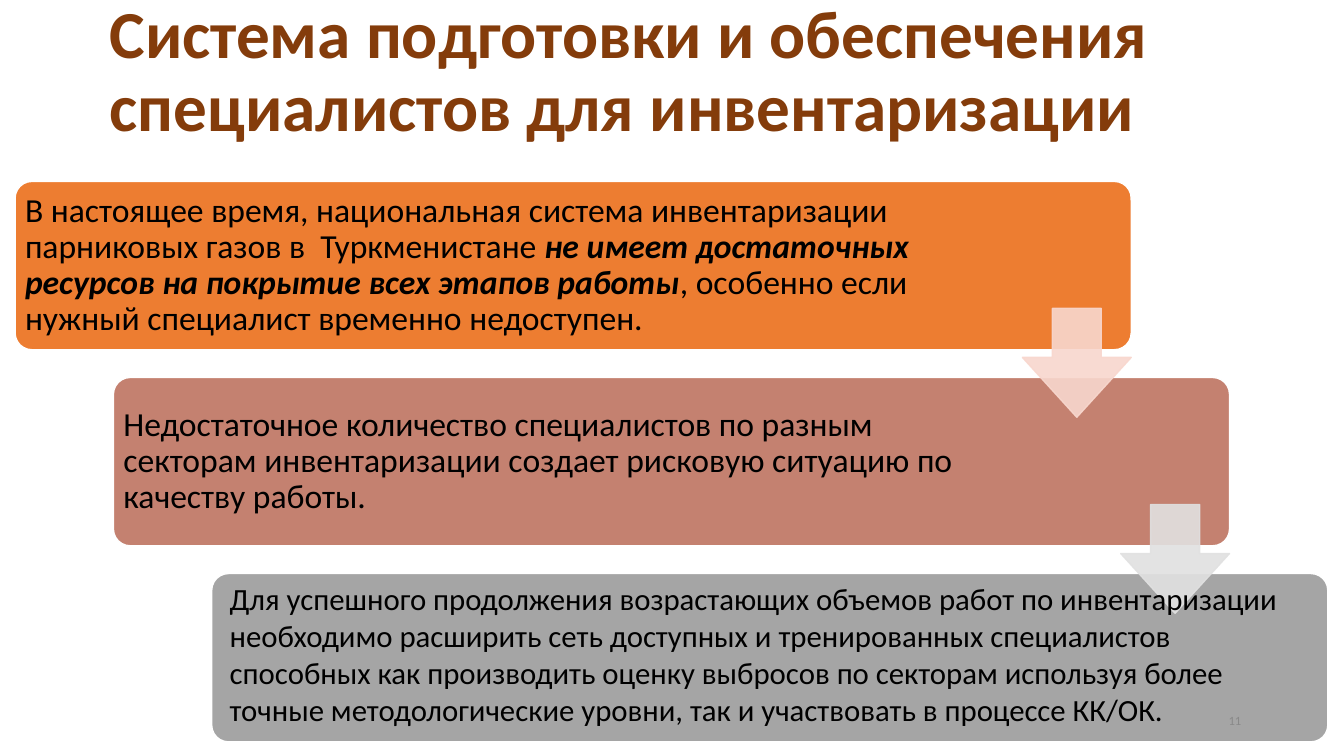
from lxml import etree
from pptx import Presentation
from pptx.dml.color import RGBColor
from pptx.enum.shapes import MSO_SHAPE as Shape
from pptx.enum.text import MSO_ANCHOR as Anchor, PP_ALIGN as Align
from pptx.oxml.ns import qn
from pptx.util import Inches, Pt

FONT = "Calibri"
TITLE = "Система подготовки и обеспечения специалистов для инвентаризации"
CONCLUSION = (
    "Для успешного продолжения возрастающих объемов работ по инвентаризации "
    "необходимо расширить сеть доступных и тренированных специалистов способных "
    "как производить оценку выбросов по секторам используя более точные "
    "методологические уровни, так и участвовать в процессе КК/ОК."
)
# Each step: box colour, text width, runs as (text, emphasised)
STEPS = [
    ("ED7D31", 9.37, [
        ("В настоящее время, национальная система инвентаризации парниковых "
         "газов в  Туркменистане ", False),
        ("не имеет достаточных ресурсов на покрытие всех этапов работы", True),
        (", особенно если нужный специалист временно недоступен.", False),
    ]),
    ("C48170", 9.01, [
        ("Недостаточное количество специалистов по разным секторам инвентаризации "
         "создает рисковую ситуацию по качеству работы.", False),
    ]),
    ("A5A5A5", 0, []),
]
ARROW_COLORS = ["F8D7CE", "E1E1E1"]
PAGE_NUMBER = "11"

STEP_LEFT, STEP_TOP = 0.15, 1.8
STEP_WIDTH, STEP_HEIGHT = 11.07, 1.67
SHIFT_X, SHIFT_Y = 0.975, 1.945
ARROW_LEFT, ARROW_TOP, ARROW_SIZE = 10.14, 3.06, 1.08


def rgb(color):
    return RGBColor.from_string(color)


def set_opacity(color_format_parent, percent):
    """Add an alpha value to every solid colour inside an XML element."""
    for color in color_format_parent.iter(qn("a:srgbClr")):
        etree.SubElement(color, qn("a:alpha")).set("val", str(percent * 1000))


def add_box(slide, kind, left, top, width, height, *, fill, line, adjustments, opacity=100):
    shape = slide.shapes.add_shape(
        kind, Inches(left), Inches(top), Inches(width), Inches(height))
    shape.shadow.inherit = False
    shape.fill.solid()
    shape.fill.fore_color.rgb = rgb(fill)
    shape.line.color.rgb = rgb(line)
    shape.line.width = Pt(1)
    for index, value in enumerate(adjustments):
        shape.adjustments[index] = value
    if opacity < 100:
        set_opacity(shape.fill._xPr, opacity)


def add_text(slide, runs, left, top, width, height, *, size, color="000000", bold=False,
             anchor=Anchor.TOP, align=Align.LEFT, spacing=1.0, inset_y=0.05):
    box = slide.shapes.add_textbox(
        Inches(left), Inches(top), Inches(width), Inches(height))
    frame = box.text_frame
    frame.word_wrap = True
    frame.vertical_anchor = anchor
    frame.margin_left = frame.margin_right = Inches(0.1)
    frame.margin_top = frame.margin_bottom = Inches(inset_y)
    paragraph = frame.paragraphs[0]
    paragraph.alignment = align
    paragraph.line_spacing = spacing
    for text, emphasised in runs:
        run = paragraph.add_run()
        run.text = text
        run.font.name = FONT
        run.font.size = Pt(size)
        run.font.bold = bold or emphasised
        run.font.italic = emphasised
        run.font.color.rgb = rgb(color)


def main():
    presentation = Presentation()
    presentation.slide_width, presentation.slide_height = Inches(13.33), Inches(7.5)
    slide = presentation.slides.add_slide(presentation.slide_layouts[6])

    add_text(slide, [(TITLE, False)], 0.99, 0, 11.5, 1.45, size=48, color="843C0B",
             bold=True, anchor=Anchor.MIDDLE, spacing=0.9)

    for index, (color, text_width, runs) in enumerate(STEPS):
        left, top = STEP_LEFT + index * SHIFT_X, STEP_TOP + index * SHIFT_Y
        add_box(slide, Shape.ROUNDED_RECTANGLE, left, top, STEP_WIDTH, STEP_HEIGHT,
                fill=color, line="FFFFFF", adjustments=[0.1])
        if runs:
            add_text(slide, runs, left, top, text_width, STEP_HEIGHT, size=24,
                     anchor=Anchor.MIDDLE, spacing=0.9, inset_y=0.1)

    for index, color in enumerate(ARROW_COLORS):
        add_box(slide, Shape.DOWN_ARROW, ARROW_LEFT + index * SHIFT_X,
                ARROW_TOP + index * SHIFT_Y, ARROW_SIZE, ARROW_SIZE,
                fill=color, line=color, adjustments=[0.45, 0.55], opacity=90)

    add_text(slide, [(CONCLUSION, False)], 2.18, 5.7, 10.94, 1.58, size=22)
    add_text(slide, [(PAGE_NUMBER, False)], 9.41, 6.95, 3, 0.4, size=9, color="898989",
             anchor=Anchor.MIDDLE, align=Align.RIGHT)

    presentation.save("out.pptx")


if __name__ == "__main__":
    main()
